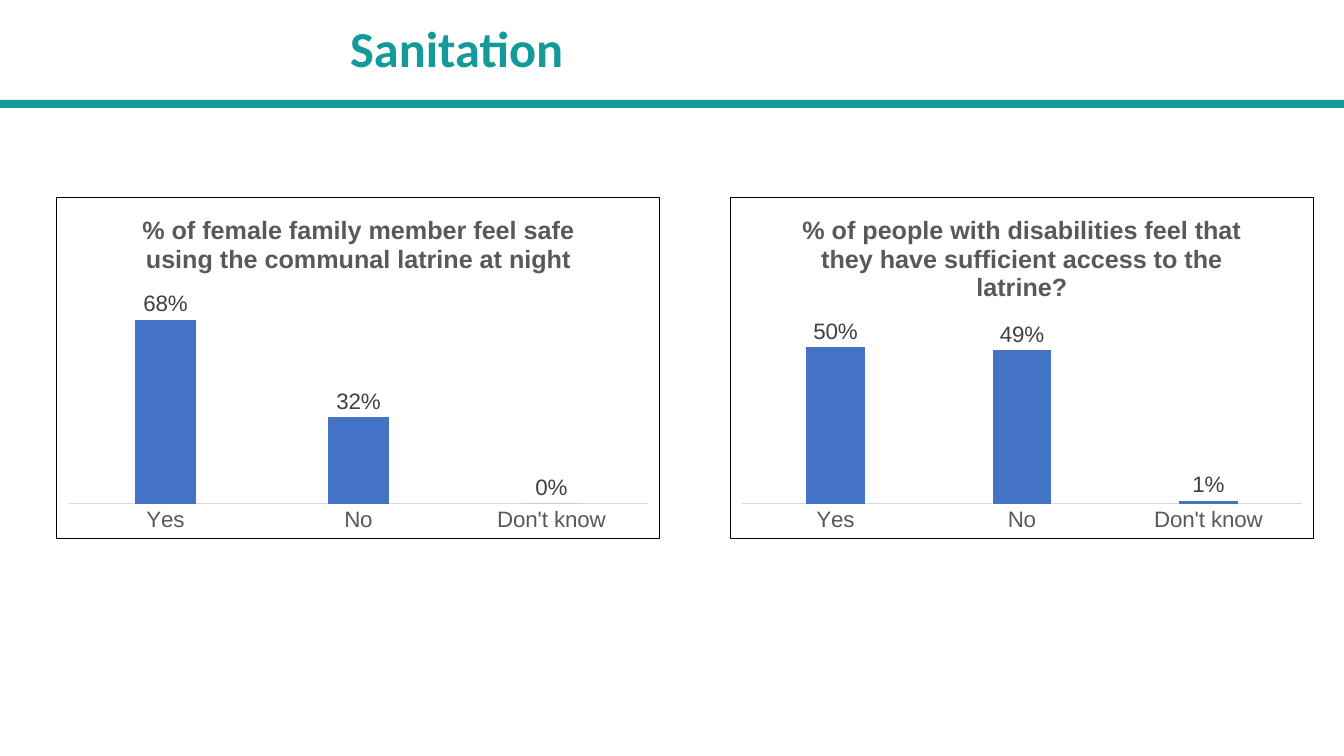
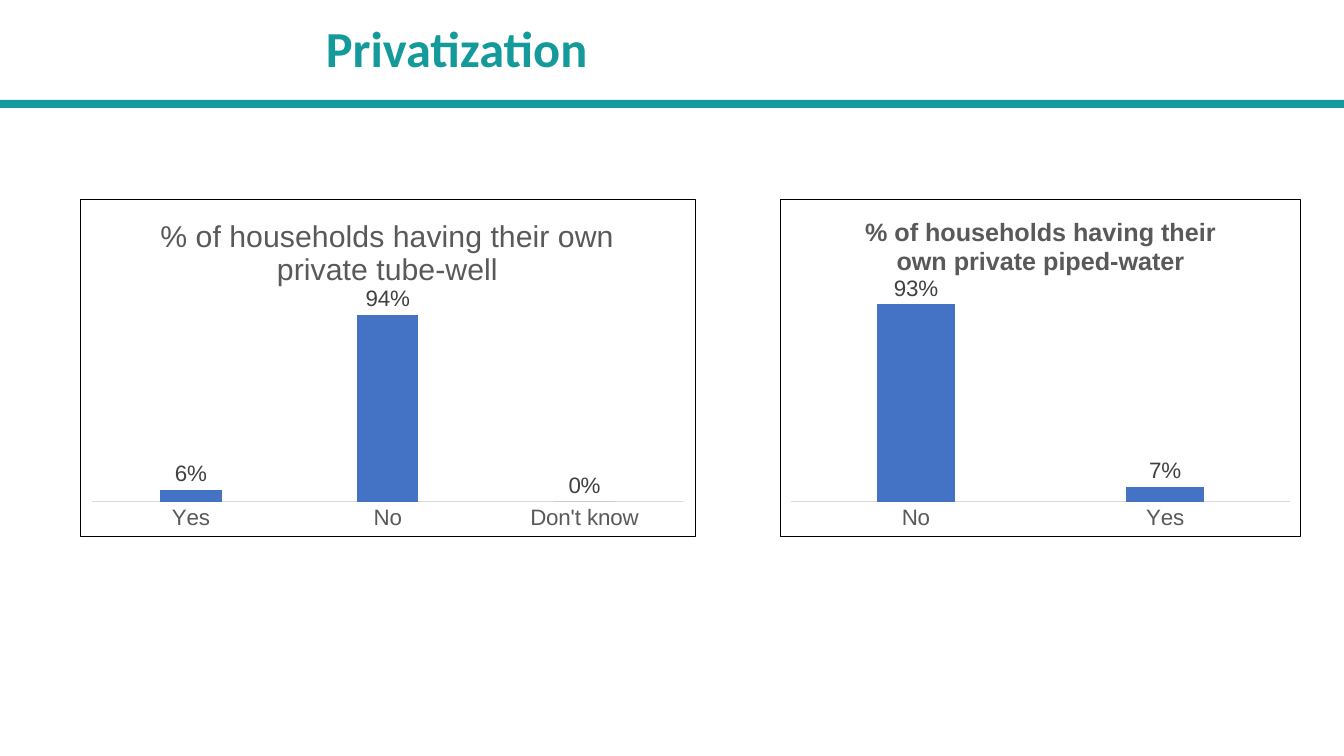
from lxml import etree
from pptx import Presentation
from pptx import util as u
from pptx.chart.data import CategoryChartData
from pptx.dml.color import RGBColor
from pptx.enum import chart as charts, shapes, text
from pptx.oxml import parse_xml

TEAL = RGBColor(0x14, 0x9A, 0x9A)
BLUE = RGBColor(0x44, 0x72, 0xC4)
BLACK = RGBColor(0x00, 0x00, 0x00)
DARK_GREY = RGBColor(0x40, 0x40, 0x40)
GREY = RGBColor(0x59, 0x59, 0x59)
LIGHT_GREY = RGBColor(0xD9, 0xD9, 0xD9)

FRAME = (
    '<c:spPr xmlns:c="http://schemas.openxmlformats.org/drawingml/2006/chart"'
    ' xmlns:a="http://schemas.openxmlformats.org/drawingml/2006/main">'
    '<a:solidFill><a:srgbClr val="FFFFFF"/></a:solidFill>'
    f'<a:ln w="9525"><a:solidFill><a:srgbClr val="{BLACK}"/></a:solidFill></a:ln>'
    '</c:spPr>'
)

SLIDES = [
    ("Sanitation", 1.95, 3.4, [
        (0.56, 5.99, "% of female family member feel safe using the communal latrine at night",
         18, True, 0.8, {"Yes": 0.68, "No": 0.32, "Don't know": 0}),
        (7.24, 5.79, "% of people with disabilities feel that they have sufficient access to the latrine?",
         18, True, 0.6, {"Yes": 0.5, "No": 0.49, "Don't know": 0.01}),
    ]),
    ("Privatization", 1.97, 3.36, [
        (0.79, 6.11, "% of households having their own private tube-well",
         21.6, False, 1, {"Yes": 0.06, "No": 0.94, "Don't know": 0}),
        (7.74, 5.16, "% of households having their own private piped-water",
         18, True, 1, {"No": 0.93, "Yes": 0.07}),
    ]),
]


def set_font(font, size, color, bold=False, name="Arial"):
    font.name = name
    font.size = u.Pt(size)
    font.bold = bold
    font.color.rgb = color


def add_column_chart(slide, box, heading, heading_size, heading_bold, maximum, values):
    data = CategoryChartData(number_format="0%")
    data.categories = list(values)
    data.add_series("Series 1", list(values.values()))
    chart = slide.shapes.add_chart(charts.XL_CHART_TYPE.COLUMN_CLUSTERED, *box, data).chart
    set_font(chart.font, 10, BLACK)
    chart.font._element.getroottree().getroot().find("{*}txPr").addprevious(parse_xml(FRAME))
    chart.has_legend = False

    chart.has_title = True
    chart.chart_title.include_in_layout = False
    paragraph = chart.chart_title.text_frame.paragraphs[0]
    paragraph.text = heading
    set_font(paragraph.font, heading_size, GREY, heading_bold)

    value_axis = chart.value_axis
    value_axis.visible = False
    value_axis.has_major_gridlines = False
    value_axis.minimum_scale = 0
    value_axis.maximum_scale = maximum

    category_axis = chart.category_axis
    category_axis.major_tick_mark = charts.XL_TICK_MARK.NONE
    category_axis.format.line.color.rgb = LIGHT_GREY
    category_axis.format.line.width = u.Pt(0.75)
    set_font(category_axis.tick_labels.font, 16, GREY)

    plot = chart.plots[0]
    plot.vary_by_categories = False
    plot.gap_width = 219
    plot.overlap = -27
    plot.series[0].format.fill.solid()
    plot.series[0].format.fill.fore_color.rgb = BLUE
    plot.has_data_labels = True
    labels = plot.data_labels
    labels.show_value = True
    labels.position = charts.XL_LABEL_POSITION.OUTSIDE_END
    labels.number_format = "0%"
    labels.number_format_is_linked = False
    set_font(labels.font, 16, DARK_GREY)


presentation = Presentation()
presentation.slide_width = u.Inches(13.33)
presentation.slide_height = u.Inches(7.5)

layout = presentation.slide_layouts[5]
layout_title = layout.placeholders[0]
layout_title.left, layout_title.top = u.Inches(1.06), u.Inches(0.18)
layout_title.width, layout_title.height = u.Inches(6.94), u.Inches(0.65)

for title, top, height, panels in SLIDES:
    slide = presentation.slides.add_slide(layout)
    frame = slide.shapes.title.text_frame
    frame.text = title
    frame.auto_size = text.MSO_AUTO_SIZE.SHAPE_TO_FIT_TEXT
    paragraph = frame.paragraphs[0]
    paragraph.alignment = text.PP_ALIGN.CENTER
    paragraph.line_spacing = 0.9
    set_font(paragraph.font, 36, TEAL, True, "Calibri")
    for left, width, *content in panels:
        box = [u.Inches(length) for length in (left, top, width, height)]
        add_column_chart(slide, box, *content)

band = presentation.slides[0].shapes.add_shape(
    shapes.MSO_SHAPE.RECTANGLE, 0, u.Inches(0.99), presentation.slide_width, u.Inches(0.08))
band.shadow.inherit = False
band.fill.solid()
band.fill.fore_color.rgb = TEAL
band.line.fill.background()
layout.shapes.element.append(band.element)

presentation.save("out.pptx")
